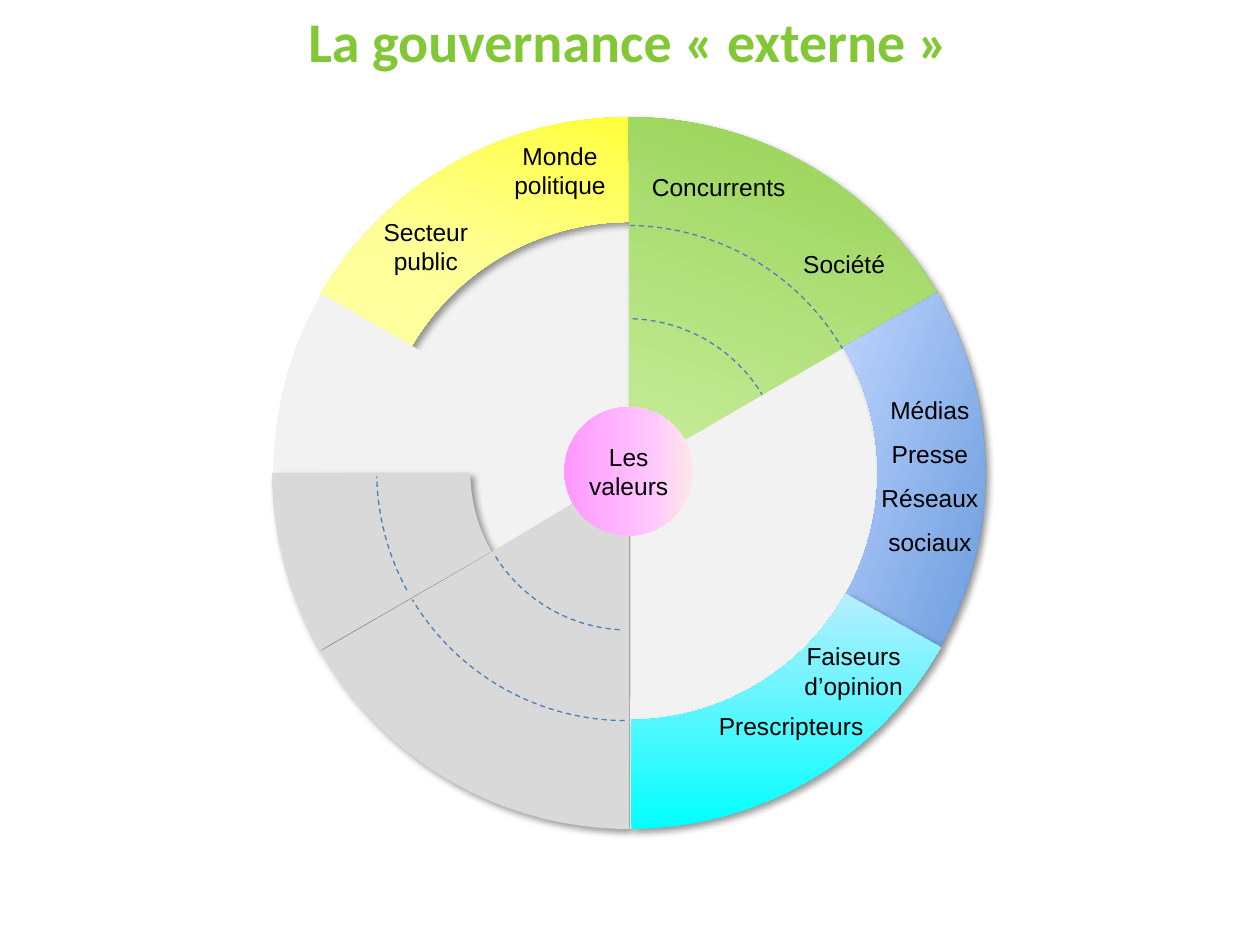
from lxml.etree import SubElement
from pptx import Presentation
from pptx.dml.color import RGBColor
from pptx.enum.dml import MSO_LINE
from pptx.enum.shapes import MSO_SHAPE
from pptx.enum.text import MSO_ANCHOR, MSO_AUTO_SIZE, PP_ALIGN
from pptx.oxml.ns import qn
from pptx.util import Inches, Pt

COLORS = {"title": "82C836", "text": "000000", "pale": "F2F2F2", "gray": "D9D9D9",
          "dash": "4B7EBC", "shadow": "000000"}
# Gradients: clockwise angle, then (percent, colour) stops
GRADIENTS = {
    "yellow": (110, [(0, "FFFF00"), (35, "FFFF99"), (100, "FFFFCC")]),
    "green": (110, [(0, "92D050"), (74, "E4FCC2"), (100, "F5FFE7")]),
    "blue": (200, [(0, "558ED5"), (35, "BFD4FF"), (100, "E6EEFF")]),
    "cyan": (270, [(0, "00FFFF"), (35, "C1EDFF"), (100, "E7F8FF")]),
    "pink": (180, [(0, "FFE7E7"), (35, "FFC5FF"), (98, "FF99FF")]),
}
TITLE = "La gouvernance « externe »"
CENTER_LABEL = "Les valeurs"
WHEEL_WIDTH, WHEEL_HEIGHT = 5.67, 5.66

# Angles are clockwise degrees from the right-hand side.
# base / front: left, top, start, end (front: also fill and ring thickness, None for a full wedge)
# arcs: left, top, diameter, start, end, fill
# labels: left, top, width, height, line spacing, paragraphs
SECTORS = [
    dict(base=(2.17, 0.93, 209.92, 270.03, "pale"),
         front=(2.16, 0.93, 210, 270.01, "yellow", 0.147), arcs=[],
         labels=[(2.94, 1.67, 0.88, 0.57, None, ["Secteur\npublic"]),
                 (3.98, 1.07, 0.93, 0.57, None, ["Monde", "politique"])]),
    dict(base=(2.17, 0.92, 149.87, 210.03, "pale"),
         front=(2.16, 0.92, 150.09, 179.93, "gray", 0.278),
         arcs=[(2.99, 1.76, 3.96, 151.52, 178.75, None)], labels=[]),
    dict(base=(2.17, 0.93, 269.95, 329.87, "pale"),
         front=(2.16, 0.93, 269.95, 329.87, "green", None),
         arcs=[(3, 1.79, 3.96, 270.58, 330.09, None), (3.73, 2.53, 2.5, 271.91, 328.83, None)],
         labels=[(5.07, 1.32, 1.27, 0.34, None, ["Concurrents"]),
                 (6.27, 1.93, 0.86, 0.34, None, ["Société"])]),
    dict(base=(2.16, 0.92, 329.87, 29.94, "pale"),
         front=(2.15, 0.92, 329.82, 29.2, "blue", 0.151), arcs=[],
         labels=[(6.89, 2.97, 0.98, 1.51, 1.5, ["Médias", "Presse", "Réseaux", "sociaux"])]),
    dict(base=(2.17, 0.92, 90, 149.92, "gray"),
         front=(2.16, 0.92, 90, 149.92, "gray", None),
         arcs=[(2.99, 1.76, 3.96, 90.33, 148.97, "gray"), (3.74, 2.5, 2.5, 93.29, 148.07, "gray")],
         labels=[]),
    dict(base=(2.17, 0.92, 29.42, 90.08, "pale"),
         front=(2.16, 0.92, 29.32, 89.66, "cyan", 0.153), arcs=[],
         labels=[(5.6, 5.59, 1.36, 0.34, None, ["Prescripteurs"]),
                 (6.28, 5.04, 0.99, 0.57, None, ["Faiseurs\nd’opinion"])]),
]


def rgb(name):
    return RGBColor.from_string(COLORS[name])


def paint(shape, name):
    """Fill with a gradient, a solid colour or, for None, nothing."""
    if name is None:
        shape.fill.background()
    elif name in GRADIENTS:
        angle, stops = GRADIENTS[name]
        shape.fill.gradient()
        shape.fill.gradient_angle = 360 - angle
        stop_list = shape._element.spPr.find(qn("a:gradFill")).find(qn("a:gsLst"))
        for old in list(stop_list):
            stop_list.remove(old)
        for percent, color in stops:
            stop = SubElement(stop_list, qn("a:gs"), pos=str(percent * 1000))
            SubElement(stop, qn("a:srgbClr"), val=color)
    else:
        shape.fill.solid()
        shape.fill.fore_color.rgb = rgb(name)


def add_figure(parent, kind, left, top, width, height, fill, angles=(), thickness=None):
    shape = parent.add_shape(kind, Inches(left), Inches(top), Inches(width), Inches(height))
    for index, angle in enumerate(angles):
        shape.adjustments[index] = angle * 0.6  # 60000 units a degree, scaled by 100000
    if thickness is not None:
        shape.adjustments[2] = thickness
    paint(shape, fill)
    shape.line.fill.background()
    shape.shadow.inherit = False
    return shape


def add_shadow(shape):
    effects = shape._element.spPr.find(qn("a:effectLst"))
    shadow = SubElement(effects, qn("a:outerShdw"), blurRad=str(Pt(4)), dist=str(Pt(3)),
                        dir=str(45 * 60000), algn="tl", rotWithShape="0")
    color = SubElement(shadow, qn("a:srgbClr"), val=COLORS["shadow"])
    SubElement(color, qn("a:alpha"), val="40000")


def add_arc(parent, left, top, diameter, start, end, fill):
    arc = add_figure(parent, MSO_SHAPE.ARC, left, top, diameter, diameter, fill, (start, end))
    arc.line.color.rgb = rgb("dash")
    arc.line.width = Pt(0.75)
    arc.line.dash_style = MSO_LINE.DASH


def write(frame, paragraphs, size=14, font="Arial", color="text", bold=False, spacing=None):
    for index, text in enumerate(paragraphs):
        para = frame.add_paragraph() if index else frame.paragraphs[0]
        para.alignment = PP_ALIGN.CENTER
        if spacing:
            para.line_spacing = spacing
        for number, line in enumerate(text.split("\n")):
            if number:
                para.add_line_break()
            span = para.add_run()
            span.text = line
            span.font.size = Pt(size)
            span.font.name = font
            span.font.bold = bold
            span.font.color.rgb = rgb(color)


def add_label(parent, left, top, width, height, spacing, paragraphs):
    box = parent.add_textbox(Inches(left), Inches(top), Inches(width), Inches(height))
    box.text_frame.word_wrap = False
    box.text_frame.auto_size = MSO_AUTO_SIZE.SHAPE_TO_FIT_TEXT
    write(box.text_frame, paragraphs, spacing=spacing)


def add_sector(page, base, front, arcs, labels):
    group = page.shapes.add_group_shape().shapes
    left, top, start, end, fill = base
    add_figure(group, MSO_SHAPE.PIE, left, top, WHEEL_WIDTH, WHEEL_HEIGHT, fill, (start, end))
    left, top, start, end, fill, thickness = front
    kind = MSO_SHAPE.PIE if thickness is None else MSO_SHAPE.BLOCK_ARC
    add_shadow(add_figure(group, kind, left, top, WHEEL_WIDTH, WHEEL_HEIGHT, fill,
                          (start, end), thickness))
    for arc in arcs:
        add_arc(group, *arc)
    for label in labels:
        add_label(group, *label)


def main():
    deck = Presentation()
    deck.slide_width, deck.slide_height = Inches(10), Inches(7.5)
    page = deck.slides.add_slide(deck.slide_layouts[5])

    title = page.shapes.title
    title.left, title.top = Inches(-0.02), Inches(0)
    title.width, title.height = Inches(10.02), Inches(0.64)
    title.text_frame.vertical_anchor = MSO_ANCHOR.MIDDLE
    write(title.text_frame, [TITLE], size=32, font="Calibri", color="title", bold=True)

    for sector in SECTORS:
        add_sector(page, **sector)

    hub = add_figure(page.shapes, MSO_SHAPE.OVAL, 4.48, 3.23, 1.02, 1.02, "pink")
    frame = hub.text_frame
    frame.word_wrap = True
    frame.vertical_anchor = MSO_ANCHOR.MIDDLE
    frame.margin_left = frame.margin_right = 0
    write(frame, [CENTER_LABEL])

    deck.save("out.pptx")


if __name__ == "__main__":
    main()
